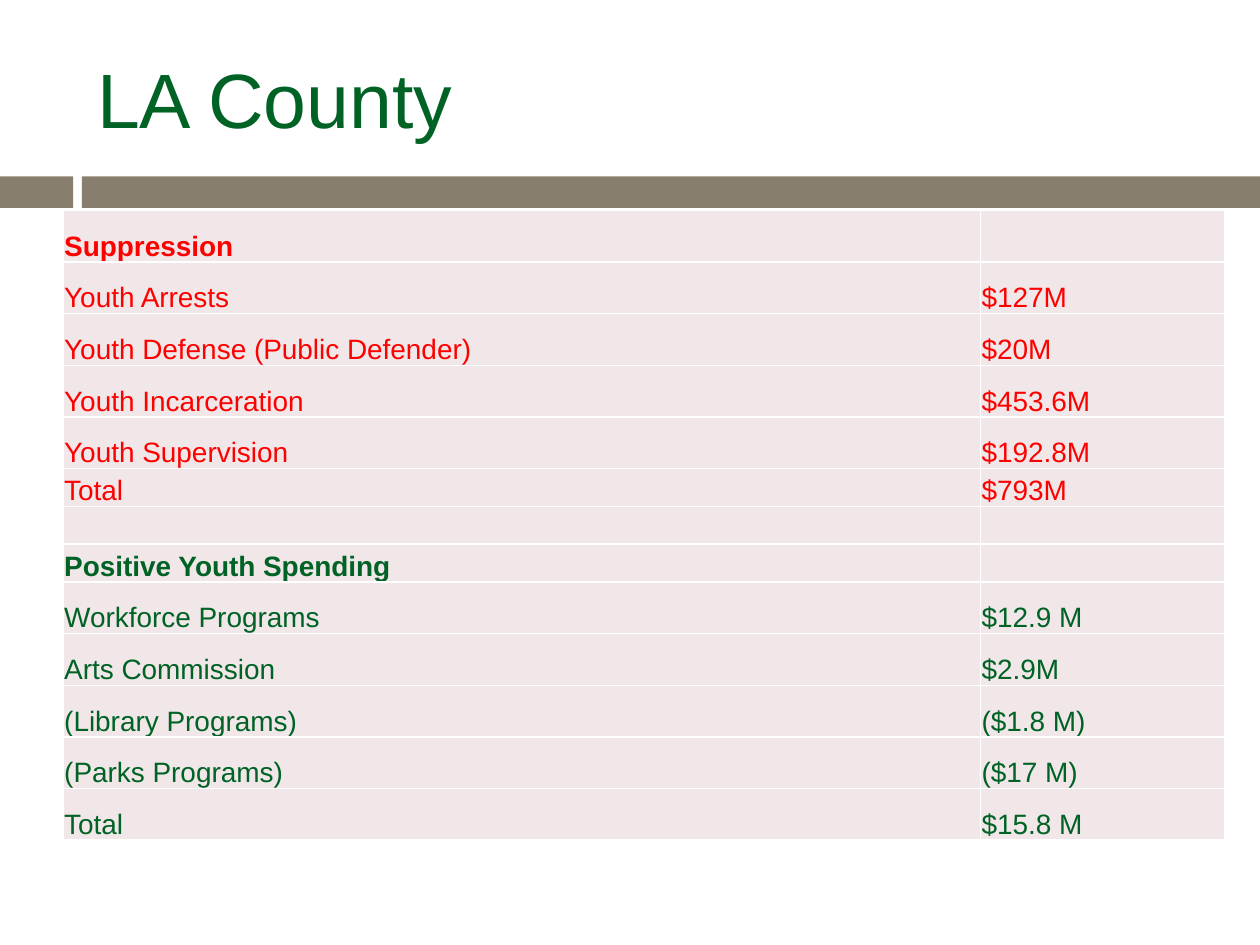
from dataclasses import dataclass

from lxml.etree import SubElement as Sub
from pptx import Presentation
from pptx.dml.color import RGBColor as Rgb
from pptx.enum.shapes import MSO_SHAPE as Shape
from pptx.enum.text import MSO_ANCHOR as Anchor, PP_ALIGN as Align
from pptx.oxml.ns import qn
from pptx.util import Inches, Pt


@dataclass
class Theme:
    font: str = "Arial"
    green: str = "006225"
    red: str = "FF0000"
    bar: str = "887E6E"
    cell: str = "F1E7E8"
    line: str = "FFFFFF"
    title: int = 44
    body: int = 16


theme = Theme()


def add_run(para, text, size, color, bold=False):
    run = para.add_run()
    run.text = text
    font = run.font
    font.name, font.size, font.bold = theme.font, Pt(size), bold
    font.color.rgb = Rgb.from_string(color)


def add_edges(cell):
    props = cell._tc.get_or_add_tcPr()
    for side in ("lnL", "lnR", "lnT", "lnB"):
        edge = Sub(props, qn(f"a:{side}"), w=str(Pt(1)))
        fill = Sub(edge, qn("a:solidFill"))
        Sub(fill, qn("a:srgbClr"), val=theme.line)


deck = Presentation()
deck.slide_width, deck.slide_height = Inches(10), Inches(7.5)
slide = deck.slides.add_slide(deck.slide_layouts[5])

# Divider bars
for left, width in ((0, 0.58), (0.65, 9.35)):
    bar = slide.shapes.add_shape(
        Shape.RECTANGLE, Inches(left), Inches(1.4), Inches(width), Inches(0.25))
    bar.shadow.inherit = False
    bar.fill.solid()
    bar.fill.fore_color.rgb = Rgb.from_string(theme.bar)
    bar.line.fill.background()

# Title
title = slide.shapes.title
title.left, title.top = Inches(0.67), Inches(0.3)
title.width, title.height = Inches(8.83), Inches(0.95)
title.text_frame.vertical_anchor = Anchor.MIDDLE
para = title.text_frame.paragraphs[0]
para.alignment = Align.LEFT
add_run(para, "LA County", theme.title, theme.green)

# Spending rows: label, amount, height, color
tall, short = 0.41, 0.3
rows = [
    ("Suppression", "", tall, theme.red),
    ("Youth Arrests", "$127M", tall, theme.red),
    ("Youth Defense (Public Defender)", "$20M", tall, theme.red),
    ("Youth Incarceration", "$453.6M", tall, theme.red),
    ("Youth Supervision", "$192.8M", tall, theme.red),
    ("Total", "$793M", short, theme.red),
    ("", "", short, theme.red),
    ("Positive Youth Spending", "", short, theme.green),
    ("Workforce Programs", "$12.9 M", tall, theme.green),
    ("Arts Commission", "$2.9M", tall, theme.green),
    ("(Library Programs)", "($1.8 M)", tall, theme.green),
    ("(Parks Programs)", "($17 M)", tall, theme.green),
    ("Total", "$15.8 M", tall, theme.green),
]

# Spending table
table = slide.shapes.add_table(
    len(rows), 2, Inches(0.5), Inches(1.67), Inches(9.22), Inches(5)).table
table.first_row = table.horz_banding = False
for col, width in zip(table.columns, (7.28, 1.94)):
    col.width = Inches(width)
for r, (label, amount, height, color) in enumerate(rows):
    table.rows[r].height = Inches(height)
    for c, text in enumerate((label, amount)):
        cell = table.cell(r, c)
        cell.margin_left = cell.margin_right = cell.margin_top = Inches(0.01)
        cell.margin_bottom = 0
        cell.vertical_anchor = Anchor.BOTTOM
        add_edges(cell)
        cell.fill.solid()
        cell.fill.fore_color.rgb = Rgb.from_string(theme.cell)
        para = cell.text_frame.paragraphs[0]
        if text:
            add_run(para, text, theme.body, color, bold=not amount)
        else:
            para.font.size = Pt(theme.body)

deck.save("out.pptx")
